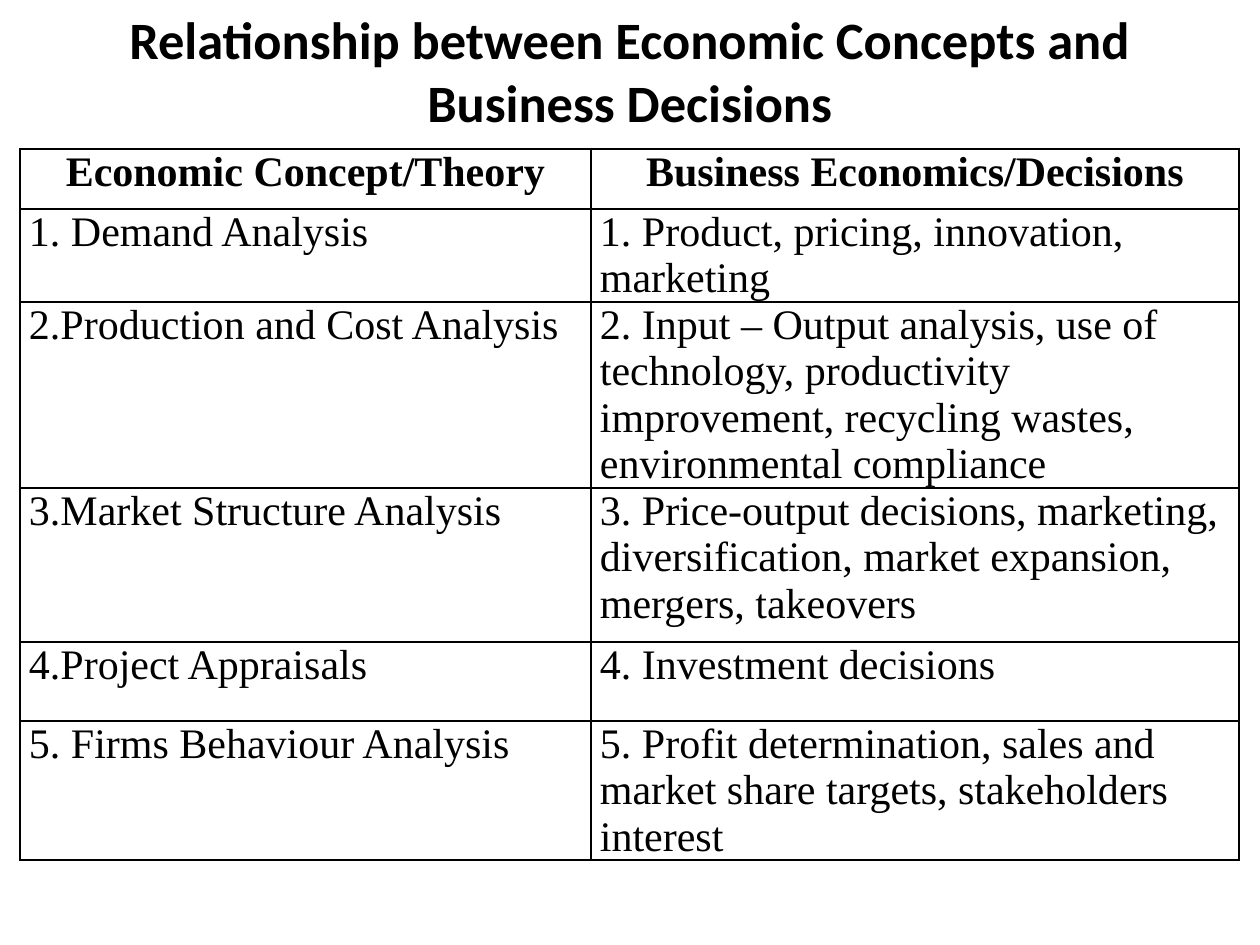
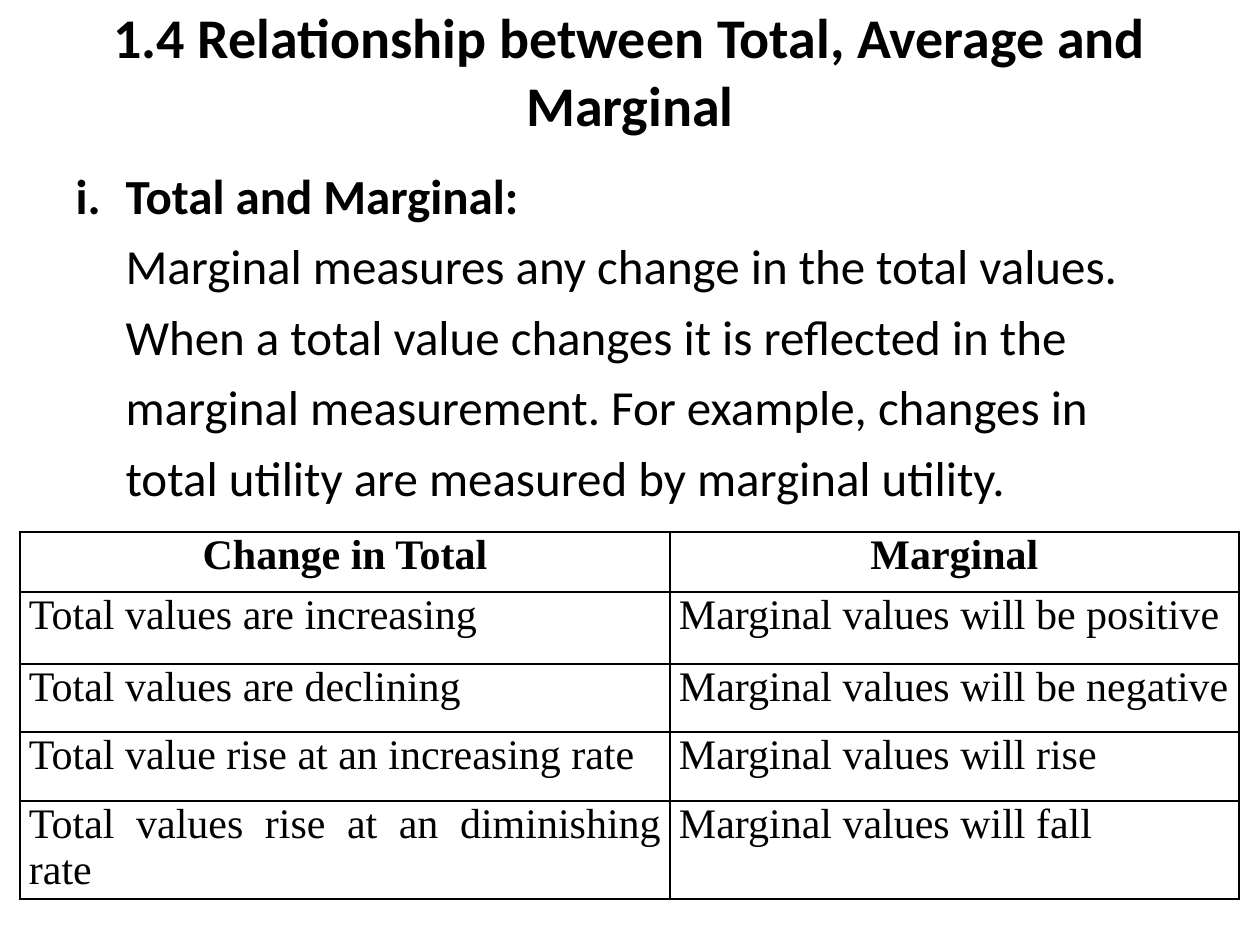
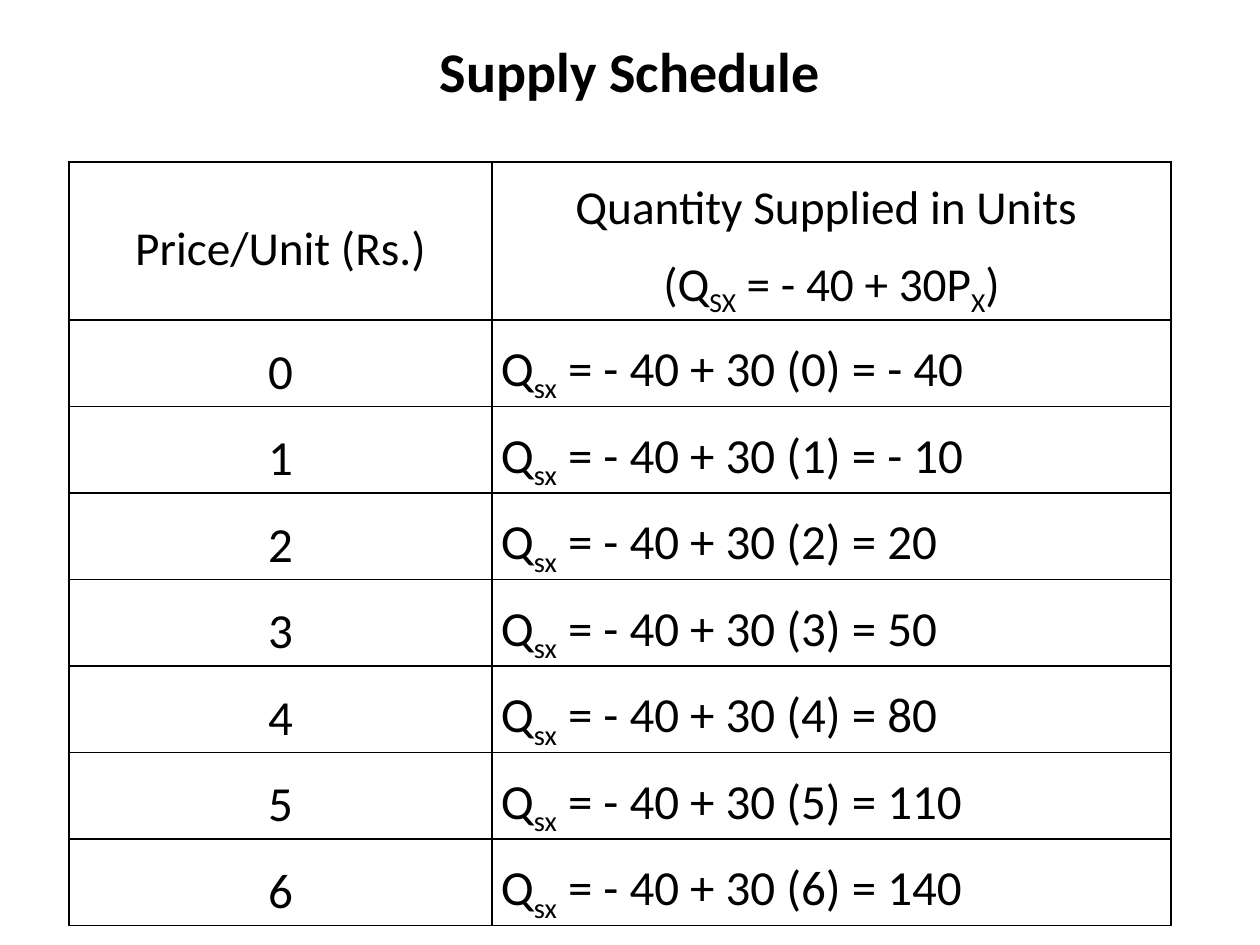
from lxml import etree
from pptx import Presentation
from pptx import util as u
from pptx.dml.color import RGBColor
from pptx.enum import text
from pptx.oxml import ns

PX = u.Inches(1) / 126
COLORS = {"ink": "000000"}
SANS, SERIF = "Calibri", "Times New Roman"
TITLE_BOX = (63, 20, 1134, 100)
LEFT, CENTER, JUSTIFY = (
    text.PP_ALIGN.LEFT, text.PP_ALIGN.CENTER, text.PP_ALIGN.JUSTIFY)
TITLE_ONLY, TITLE_AND_BODY = 5, 1


def px(n):
    return u.Emu(round(n * PX))


def place(sp, box):
    sp.left, sp.top, sp.width, sp.height = map(px, box)


def add_runs(p, content, font, size, bold=False):
    """Add runs to a paragraph; parts between tildes are subscripts."""
    for i, part in enumerate(content.split("~")):
        r = p.add_run()
        r.text = part
        r.font.name, r.font.size, r.font.bold = font, u.Pt(size), bold
        r.font.color.rgb = RGBColor.from_string(COLORS["ink"])
        if i % 2:
            r._r.get_or_add_rPr().set("baseline", "-25000")


def add_titled_slide(prs, layout, title, size):
    s = prs.slides.add_slide(prs.slide_layouts[layout])
    place(s.shapes.title, TITLE_BOX)
    tf = s.shapes.title.text_frame
    tf.auto_size = text.MSO_AUTO_SIZE.NONE
    tf.vertical_anchor = text.MSO_ANCHOR.MIDDLE
    p = tf.paragraphs[0]
    p.alignment = CENTER
    add_runs(p, title, SANS, size, True)
    return s


def style_cell(cell, anchor):
    cell.margin_left = cell.margin_right = px(9)
    cell.margin_top = cell.margin_bottom = 0
    cell.vertical_anchor = anchor
    tcPr = cell._tc.get_or_add_tcPr()
    for side in ("lnL", "lnR", "lnT", "lnB"):
        ln = etree.SubElement(tcPr, ns.qn(f"a:{side}"), w=str(u.Pt(1)))
        fill = etree.SubElement(ln, ns.qn("a:solidFill"))
        etree.SubElement(fill, ns.qn("a:srgbClr"), val=COLORS["ink"])
    cell.fill.background()


def add_grid(s, left, top, widths, heights, rows, aligns, font, sizes,
             bold_head=False, anchor=text.MSO_ANCHOR.TOP, spacing=None):
    """Bordered table; sizes holds the header and the body text size."""
    box = (left, top, sum(widths), sum(heights))
    table = s.shapes.add_table(len(rows), len(widths), *map(px, box)).table
    table.first_row = table.horz_banding = False
    for column, width in zip(table.columns, widths):
        column.width = px(width)
    for i, (row, height) in enumerate(zip(rows, heights)):
        table.rows[i].height = px(height)
        head = i == 0
        for j, content in enumerate(row):
            cell = table.cell(i, j)
            style_cell(cell, anchor)
            tf = cell.text_frame
            for k, line in enumerate(content.split("\n")):
                p = tf.add_paragraph() if k else tf.paragraphs[0]
                p.alignment = CENTER if head else aligns[j]
                if spacing:
                    p.line_spacing = spacing
                add_runs(p, line, font, sizes[0 if head else 1],
                         head and bold_head)


def add_numbered_body(s, box, heading, content):
    """Roman-numbered heading with an indented paragraph below it."""
    body = s.placeholders[1]
    place(body, box)
    tf = body.text_frame
    tf.auto_size = text.MSO_AUTO_SIZE.NONE
    for i, line in enumerate((heading, content)):
        p = tf.add_paragraph() if i else tf.paragraphs[0]
        p.line_spacing, p.space_before = 1.2, u.Pt(0)
        pPr = p._p.get_or_add_pPr()
        pPr.set("marL", str(px(50)))
        pPr.set("indent", str(0 if i else px(-50)))
        if i:
            etree.SubElement(pPr, ns.qn("a:buNone"))
        else:
            etree.SubElement(pPr, ns.qn("a:buAutoNum"), type="romanLcPeriod")
        add_runs(p, line, SANS, 28, i == 0)


def concepts_slide(prs):
    s = add_titled_slide(
        prs, TITLE_ONLY,
        "Relationship between Economic Concepts and Business Decisions", 30)
    rows = [
        ("Economic Concept/Theory", "Business Economics/Decisions"),
        ("1. Demand Analysis", "1. Product, pricing, innovation, marketing"),
        ("2.Production and Cost Analysis",
         "2. Input – Output analysis, use of technology, productivity "
         "improvement, recycling wastes, environmental compliance"),
        ("3.Market Structure Analysis",
         "3. Price-output decisions, marketing, diversification, "
         "market expansion, mergers, takeovers"),
        ("4.Project Appraisals", "4. Investment decisions"),
        ("5. Firms Behaviour Analysis",
         "5. Profit determination, sales and market share targets, "
         "stakeholders interest"),
    ]
    add_grid(s, 20, 149, (571, 648), (60, 93, 186, 154, 79, 139), rows,
             (LEFT, LEFT), SERIF, (24, 24), bold_head=True)


def marginal_slide(prs):
    s = add_titled_slide(
        prs, TITLE_AND_BODY,
        "1.4 Relationship between Total, Average and Marginal", 32)
    add_numbered_body(
        s, (63, 147, 1134, 374), "Total and Marginal:",
        "Marginal measures any change in the total values. When a total "
        "value changes it is reflected in the marginal measurement. For "
        "example, changes in total utility are measured by marginal utility.")
    rows = [
        ("Change in Total", "Marginal"),
        ("Total values are increasing", "Marginal values will be positive"),
        ("Total values are declining", "Marginal values will be negative"),
        ("Total value rise at an increasing rate",
         "Marginal values will rise"),
        ("Total values rise at an diminishing rate",
         "Marginal values will fall"),
    ]
    add_grid(s, 20, 532, (650, 569), (60, 72, 68, 69, 98), rows,
             (JUSTIFY, JUSTIFY), SERIF, (24, 24), bold_head=True)


def supply_slide(prs):
    s = add_titled_slide(prs, TITLE_ONLY, "Supply Schedule", 32)
    rows = [("Price/Unit (Rs.)",
             "Quantity Supplied in Units \n(Q~SX~ = - 40 + 30P~X~)")]
    for price in range(7):
        supplied = 30 * price - 40
        sign = "- " if supplied < 0 else ""
        rows.append((str(price), f"Q~sx~ = - 40 + 30 ({price}) = "
                                 f"{sign}{abs(supplied)}"))
    add_grid(s, 69, 162, (423, 679), (158,) + (86,) * 7, rows,
             (CENTER, JUSTIFY), SANS, (27, 28),
             anchor=text.MSO_ANCHOR.MIDDLE, spacing=1.3)


def main():
    prs = Presentation()
    prs.slide_width, prs.slide_height = px(1260), px(945)
    concepts_slide(prs)
    marginal_slide(prs)
    supply_slide(prs)
    prs.save("out.pptx")


if __name__ == "__main__":
    main()
